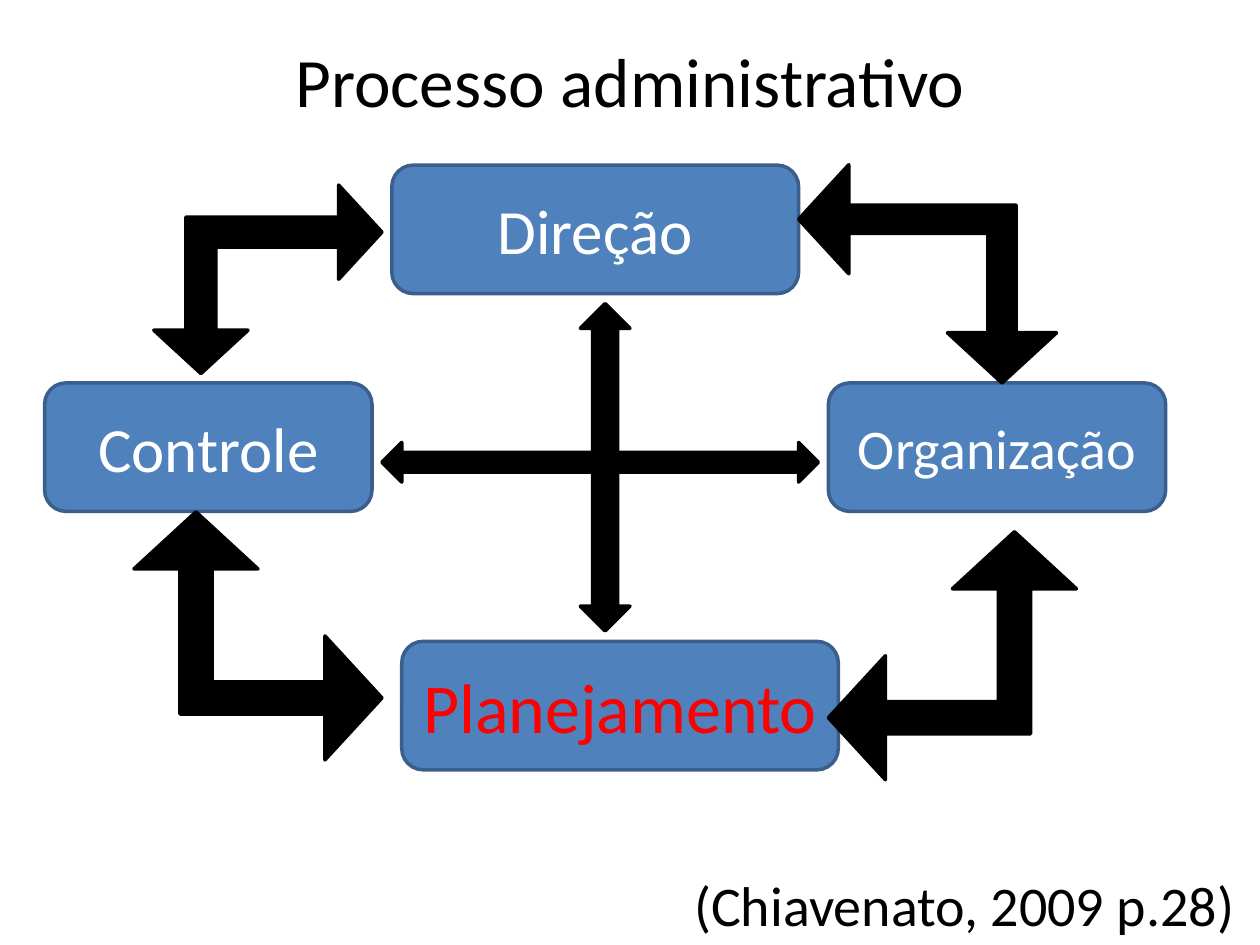
from pptx import Presentation
from pptx.dml.color import RGBColor
from pptx.enum.shapes import MSO_SHAPE
from pptx.enum.text import MSO_ANCHOR, MSO_AUTO_SIZE, PP_ALIGN
from pptx.util import Cm, Pt

COLORS = {
    "text": "000000",
    "box": "4F81BD",
    "box_line": "3A5F8C",
    "box_text": "FFFFFF",
    "highlight": "FF0000",
    "arrow": "000000",
}
FONT = "Calibri"
BOX_HEIGHT = 2.59


def color(name):
    return RGBColor.from_string(COLORS[name])


def write_text(shape, text, size, color_name, alignment):
    paragraph = shape.text_frame.paragraphs[0]
    paragraph.text = text
    paragraph.alignment = alignment
    font = paragraph.runs[0].font
    font.name = FONT
    font.size = Pt(size)
    font.color.rgb = color(color_name)


def add_title(slide, text):
    title = slide.shapes.title
    title.left, title.top, title.width, title.height = Cm(1.9), Cm(0.71), Cm(21.6), Cm(1.8)
    title.text_frame.auto_size = MSO_AUTO_SIZE.NONE
    title.text_frame.vertical_anchor = MSO_ANCHOR.MIDDLE
    write_text(title, text, 39.6, "text", PP_ALIGN.CENTER)


def add_citation(slide, text):
    box = slide.shapes.add_textbox(Cm(12.4), Cm(17.42), Cm(13), Cm(1.63))
    box.text_frame.word_wrap = True
    box.text_frame.auto_size = MSO_AUTO_SIZE.SHAPE_TO_FIT_TEXT
    write_text(box, text, 32, "text", PP_ALIGN.RIGHT)


def add_filled_shape(slide, kind, left, top, width, height, fill, line):
    shape = slide.shapes.add_shape(kind, Cm(left), Cm(top), Cm(width), Cm(height))
    shape.shadow.inherit = False
    shape.fill.solid()
    shape.fill.fore_color.rgb = color(fill)
    shape.line.color.rgb = color(line)
    shape.line.width = Pt(2)
    return shape


def add_function_box(slide, text, left, top, width, size, text_color="box_text"):
    box = add_filled_shape(slide, MSO_SHAPE.ROUNDED_RECTANGLE, left, top, width, BOX_HEIGHT,
                           "box", "box_line")
    box.text_frame.vertical_anchor = MSO_ANCHOR.MIDDLE
    write_text(box, text, size, text_color, PP_ALIGN.CENTER)


def add_arrow(slide, kind, left, top, width, height):
    return add_filled_shape(slide, kind, left, top, width, height, "arrow", "arrow")


def add_corner_arrow(slide, left, top, width, height, rotation, shaft):
    """Add a bent double arrow; shaft is its half-thickness as a share of the size."""
    arrow = add_arrow(slide, MSO_SHAPE.LEFT_UP_ARROW, left, top, width, height)
    arrow.rotation = rotation
    for index, value in enumerate((shaft, 0.25, 0.23)):
        arrow.adjustments[index] = value


def main():
    presentation = Presentation()
    presentation.slide_width, presentation.slide_height = Cm(25.4), Cm(19.05)
    slide = presentation.slides.add_slide(presentation.slide_layouts[5])

    add_title(slide, "Processo administrativo")
    add_citation(slide, "(Chiavenato, 2009 p.28) ")

    add_function_box(slide, "Direção", 7.9, 3.33, 8.2, 36)
    add_function_box(slide, "Organização", 16.7, 7.72, 6.8, 32)
    add_function_box(slide, "Controle", 0.9, 7.72, 6.6, 36)
    add_function_box(slide, "Planejamento", 8.1, 12.93, 8.8, 40, "highlight")

    add_arrow(slide, MSO_SHAPE.UP_DOWN_ARROW, 11.7, 6.12, 1, 6.6)
    add_arrow(slide, MSO_SHAPE.LEFT_RIGHT_ARROW, 7.7, 8.92, 8.8, 0.8)

    add_corner_arrow(slide, 3.1, 3.73, 4.6, 3.8, 180, 0.16)
    add_corner_arrow(slide, 16.5, 2.92, 4.4, 5.2, 270, 0.13)
    add_corner_arrow(slide, 16.7, 10.72, 5, 5, 0, 0.13)
    add_corner_arrow(slide, 2.7, 10.32, 5, 5, 90, 0.13)

    presentation.save("out.pptx")


if __name__ == "__main__":
    main()
